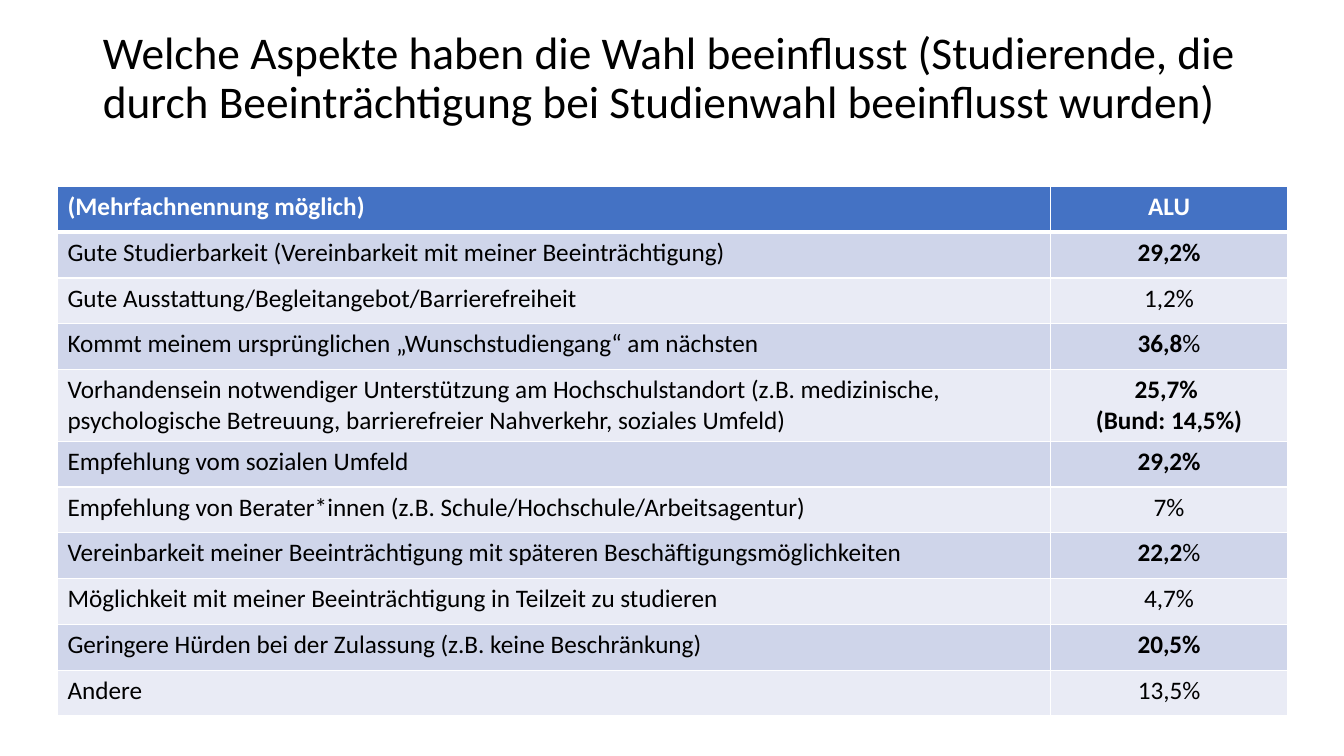
from lxml import etree
from pptx import Presentation
from pptx.dml.color import RGBColor
from pptx.enum.text import MSO_ANCHOR, PP_ALIGN
from pptx.oxml.ns import qn
from pptx.util import Inches, Pt

TOP = MSO_ANCHOR.TOP
LEFT, CENTER = PP_ALIGN.LEFT, PP_ALIGN.CENTER
TITLE_ONLY = 5

TITLE = ("Welche Aspekte haben die Wahl beeinflusst (Studierende, die "
         "durch Beeinträchtigung bei Studienwahl beeinflusst wurden)")
HEADER = ("(Mehrfachnennung möglich)", [[("ALU", True)]])
ANSWERS = [
    ("Gute Studierbarkeit (Vereinbarkeit mit meiner Beeinträchtigung)",
     [[("29,2%", True)]]),
    ("Gute Ausstattung/Begleitangebot/Barrierefreiheit",
     [[("1,2%", False)]]),
    ("Kommt meinem ursprünglichen „Wunschstudiengang“ am nächsten",
     [[("36,8", True), ("%", False)]]),
    ("Vorhandensein notwendiger Unterstützung am Hochschulstandort "
     "(z.B. medizinische, psychologische Betreuung, barrierefreier "
     "Nahverkehr, soziales Umfeld)",
     [[("25,7% ", True)], [("(Bund: 14,5%)", True)]]),
    ("Empfehlung vom sozialen Umfeld",
     [[("29,2%", True)]]),
    ("Empfehlung von Berater*innen (z.B. Schule/Hochschule/Arbeitsagentur)",
     [[("7%", False)]]),
    ("Vereinbarkeit meiner Beeinträchtigung mit späteren "
     "Beschäftigungsmöglichkeiten",
     [[("22,2", True), ("%", False)]]),
    ("Möglichkeit mit meiner Beeinträchtigung in Teilzeit zu studieren",
     [[("4,7%", False)]]),
    ("Geringere Hürden bei der Zulassung (z.B. keine Beschränkung)",
     [[("20,5%", True)]]),
    ("Andere",
     [[("13,5%", False)]]),
]


def color(value):
    return RGBColor.from_string(value)


class SlideBuilder:
    font = "Calibri"
    black, white, blue = "000000", "FFFFFF", "4472C4"
    bands = ("CFD5EA", "E9EBF5")

    def __init__(self, slide):
        self.slide = slide

    def add_span(self, para, text, size, ink, bold=False):
        span = para.add_run()
        span.text = text
        span.font.name = self.font
        span.font.size = Pt(size)
        span.font.bold = bold
        span.font.color.rgb = color(ink)

    def title(self, text, left, top, width, height):
        box = self.slide.shapes.title
        box.left, box.top = Inches(left), Inches(top)
        box.width, box.height = Inches(width), Inches(height)
        frame = box.text_frame
        frame.word_wrap = True
        frame.vertical_anchor = TOP
        frame.margin_top = 0
        para = frame.paragraphs[0]
        para.alignment = LEFT
        para.line_spacing = 0.9
        self.add_span(para, text, 32.4, self.black)

    def borders(self, cell, top, bottom):
        properties = cell._tc.get_or_add_tcPr()
        for side, width in (("L", 1), ("R", 1), ("T", top), ("B", bottom)):
            line = etree.SubElement(properties, qn(f"a:ln{side}"), w=str(Pt(width)))
            fill = etree.SubElement(line, qn("a:solidFill"))
            etree.SubElement(fill, qn("a:srgbClr"), val=self.white)

    def cell(self, cell, paragraphs, align, fill, ink, top, bottom):
        self.borders(cell, top, bottom)
        cell.fill.solid()
        cell.fill.fore_color.rgb = color(fill)
        frame = cell.text_frame
        for index, spans in enumerate(paragraphs):
            para = frame.add_paragraph() if index else frame.paragraphs[0]
            para.alignment = align
            for text, bold in spans:
                self.add_span(para, text, 18, ink, bold)

    def table(self, header, answers, left, top, widths, row_height):
        rows = [header, *answers]
        table = self.slide.shapes.add_table(
            len(rows), len(widths), Inches(left), Inches(top),
            Inches(sum(widths)), Inches(row_height * len(rows))).table
        for column, width in zip(table.columns, widths):
            column.width = Inches(width)
        for index, (label, share) in enumerate(rows):
            is_header = index == 0
            fill = self.blue if is_header else self.bands[(index - 1) % 2]
            ink = self.white if is_header else self.black
            edges = (3 if index == 1 else 1, 3 if is_header else 1)
            self.cell(table.cell(index, 0), [[(label, is_header)]], LEFT,
                      fill, ink, *edges)
            self.cell(table.cell(index, 1), share, CENTER, fill, ink, *edges)


def main():
    deck = Presentation()
    deck.slide_width, deck.slide_height = Inches(13.33), Inches(7.5)
    page = SlideBuilder(deck.slides.add_slide(deck.slide_layouts[TITLE_ONLY]))
    page.title(TITLE, 0.92, 0.3, 11.5, 1.45)
    page.table(HEADER, ANSWERS, 0.57, 1.85, (9.85, 2.35), 5 / 11)
    deck.save("out.pptx")


if __name__ == "__main__":
    main()
